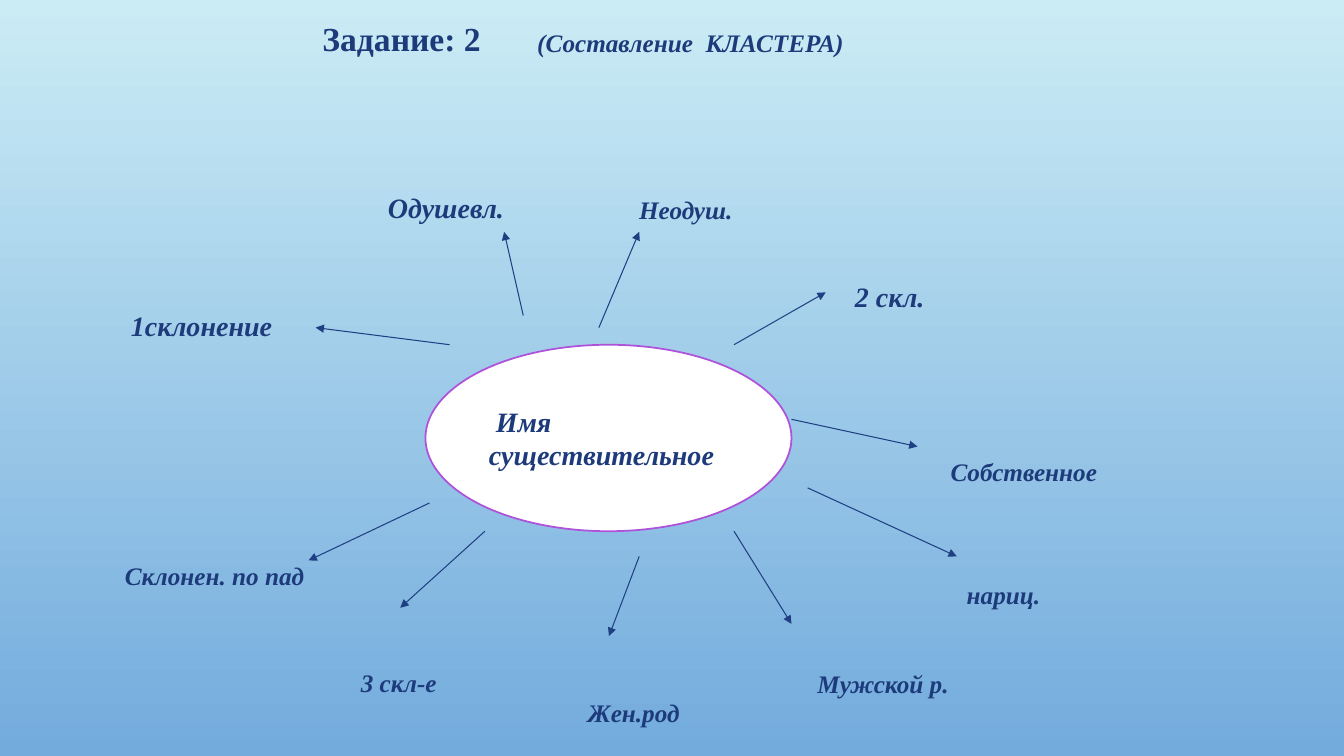
"""Build a cluster diagram slide about the noun."""
from dataclasses import dataclass

from pptx import Presentation
from pptx.dml.color import RGBColor
from pptx.enum.shapes import MSO_CONNECTOR, MSO_SHAPE
from pptx.enum.text import MSO_ANCHOR, MSO_AUTO_SIZE, PP_ALIGN
from pptx.oxml.ns import qn
from pptx.util import Inches, Pt
from lxml.etree import SubElement


@dataclass(frozen=True)
class Theme:
    """Colours, font and type sizes of the slide."""
    sky_top: RGBColor = RGBColor.from_string("CBECF5")
    sky_bottom: RGBColor = RGBColor.from_string("73ABDD")
    text: RGBColor = RGBColor.from_string("1D3B7B")
    arrow: RGBColor = RGBColor.from_string("1F3F83")
    outline: RGBColor = RGBColor.from_string("AE52D9")
    core: RGBColor = RGBColor.from_string("FFFFFF")
    font: str = "Times New Roman"
    title: Pt = Pt(24)
    large: Pt = Pt(20)
    small: Pt = Pt(18)


THEME = Theme()

LABELS = [
    ("1склонение", 1.2, 3.01, 1.62, THEME.large),
    ("Одушевл.", 3.75, 1.84, 1.43, THEME.large),
    ("Неодуш.", 6.24, 1.88, 1.22, THEME.small),
    ("2 скл.", 8.38, 2.72, 0.97, THEME.large),
    ("Мужской р.", 8.01, 6.58, 1.53, THEME.small),
    ("3 скл-е", 3.48, 6.57, 0.99, THEME.small),
    ("Склонен. по пад", 1.14, 5.51, 2.06, THEME.small),
]

SPACED_LABELS = [
    ("Собственное", 9.33, 4.43, 1.73),
    ("нариц.", 9.49, 5.65, 0.94),
    ("Жен.род", 5.73, 6.82, 1.12),
]

ARROWS = [
    (5.94, 3.25, 6.34, 2.3),
    (7.28, 3.42, 8.19, 2.9),
    (7.85, 4.16, 9.1, 4.43),
    (7.28, 5.27, 7.85, 6.19),
    (6.34, 5.52, 6.04, 6.31),
    (4.81, 5.27, 3.97, 6.03),
    (4.46, 3.42, 3.13, 3.25),
    (5.19, 3.13, 5, 2.3),
    (8.01, 4.84, 9.49, 5.52),
    (4.26, 4.99, 3.06, 5.56),
]


def paint_background(slide):
    """Fill the slide with a gradient running from top to bottom."""
    fill = slide.background.fill
    fill.gradient()
    fill.gradient_angle = 270
    for stop, colour, position in zip(
        fill.gradient_stops, (THEME.sky_top, THEME.sky_bottom), (0, 1)
    ):
        stop.color.rgb = colour
        stop.position = position


def write_text(paragraph, text, size, italic=True):
    """Put bold theme text into a paragraph."""
    paragraph.text = text
    paragraph.alignment = PP_ALIGN.LEFT
    font = paragraph.font
    font.name = THEME.font
    font.size = size
    font.bold = True
    font.italic = italic
    font.color.rgb = THEME.text


def add_label(slide, text, left, top, width, size, italic=True):
    """Add a one-line text box and return its paragraph."""
    height = size.pt / 60 + 0.1
    box = slide.shapes.add_textbox(
        Inches(left), Inches(top), Inches(width), Inches(height)
    )
    frame = box.text_frame
    frame.word_wrap = False
    frame.auto_size = MSO_AUTO_SIZE.SHAPE_TO_FIT_TEXT
    paragraph = frame.paragraphs[0]
    write_text(paragraph, text, size, italic)
    return paragraph


def add_core(slide, text):
    """Add the central ellipse with the topic of the cluster."""
    ellipse = slide.shapes.add_shape(
        MSO_SHAPE.OVAL, Inches(4.22), Inches(3.42), Inches(3.63), Inches(1.85)
    )
    ellipse.shadow.inherit = False
    ellipse.fill.solid()
    ellipse.fill.fore_color.rgb = THEME.core
    ellipse.line.color.rgb = THEME.outline
    ellipse.line.width = Pt(1.25)
    frame = ellipse.text_frame
    frame.word_wrap = True
    frame.vertical_anchor = MSO_ANCHOR.MIDDLE
    write_text(frame.paragraphs[0], text, THEME.large)


def add_arrow(slide, *ends):
    """Add a thin straight arrow between two points."""
    connector = slide.shapes.add_connector(
        MSO_CONNECTOR.STRAIGHT, *(Inches(value) for value in ends)
    )
    connector.line.color.rgb = THEME.arrow
    connector.line.width = Pt(0.75)
    line = connector.line._get_or_add_ln()
    SubElement(line, qn("a:tailEnd")).set("type", "triangle")
    SubElement(connector._element.spPr, qn("a:effectLst"))


def main():
    """Build the slide and save it."""
    presentation = Presentation()
    presentation.slide_width = Inches(13.33)
    presentation.slide_height = Inches(7.5)
    slide = presentation.slides.add_slide(presentation.slide_layouts[6])
    paint_background(slide)
    add_label(slide, "Задание: 2", 3.1, 0.13, 1.77, THEME.title, italic=False)
    add_label(slide, "(Составление  КЛАСТЕРА)", 5.23, 0.22, 3.27, THEME.small)
    add_core(slide, " Имя существительное")
    for arrow in ARROWS:
        add_arrow(slide, *arrow)
    for label in LABELS:
        add_label(slide, *label)
    for label in SPACED_LABELS:
        paragraph = add_label(slide, *label, THEME.small)
        paragraph.line_spacing = 1.15
        paragraph.space_after = Pt(10)
    presentation.save("out.pptx")


if __name__ == "__main__":
    main()
